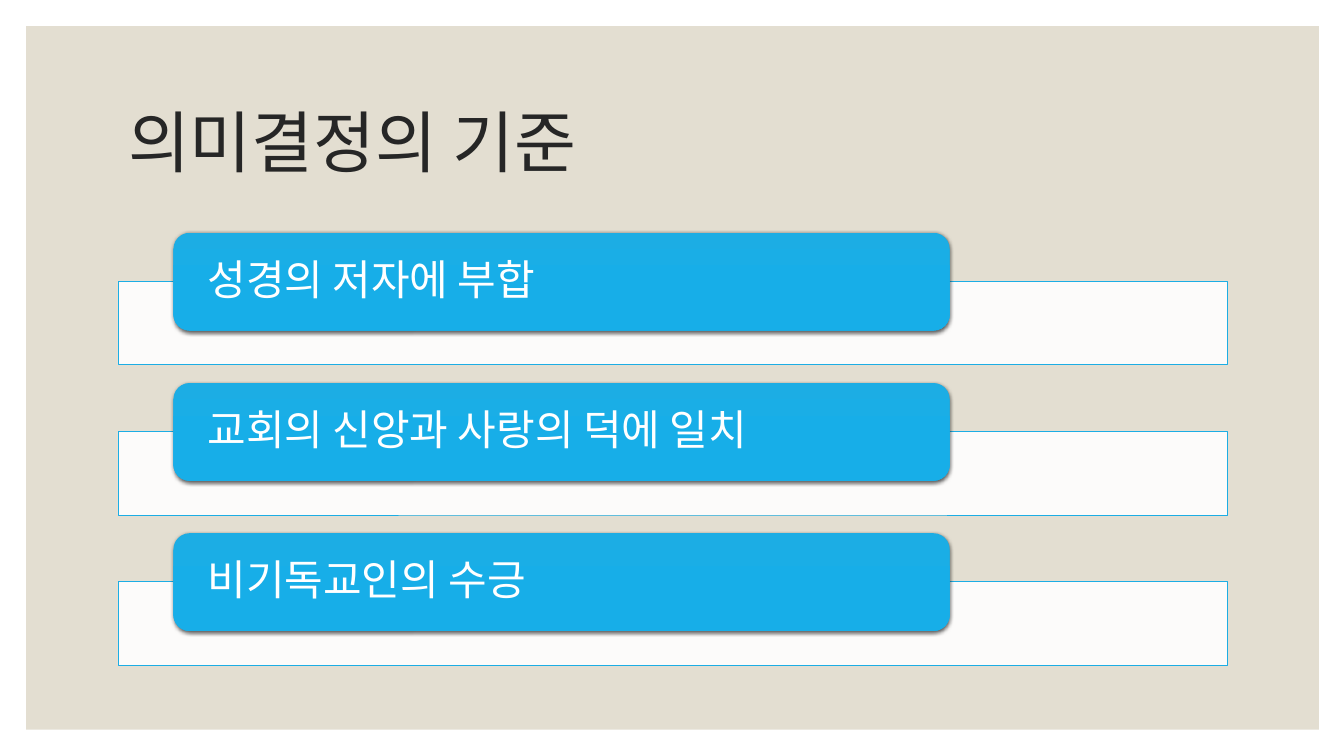
from lxml.etree import SubElement
from pptx import Presentation
from pptx.dml.color import RGBColor
from pptx.enum.shapes import MSO_SHAPE
from pptx.enum.text import MSO_ANCHOR, PP_ALIGN
from pptx.oxml.ns import qn
from pptx.util import Inches, Pt

TITLE = "의미결정의 기준"
RULES = ["성경의 저자에 부합", "교회의 신앙과 사랑의 덕에 일치", "비기독교인의 수긍"]

SAND = RGBColor(0xE3, 0xDE, 0xD1)
WHITE = RGBColor(0xFF, 0xFF, 0xFF)
INK = RGBColor(0x26, 0x26, 0x26)
BLUE = RGBColor(0x1C, 0xAD, 0xE4)
SKY = RGBColor(0x17, 0xAE, 0xE8)

LEFT, WIDTH = 1.17, 11
TOP, STEP = 2.31, 1.49
DROP = 0.48
FRAME = {"vertical_anchor": MSO_ANCHOR.MIDDLE, "word_wrap": True}
INSET = {"margin_left": Inches(0.29), "margin_right": Inches(0.29),
         "margin_top": 0, "margin_bottom": 0}
PARA = {"alignment": PP_ALIGN.LEFT, "line_spacing": 0.9}
SHADE = {"blurRad": "38100", "dist": "12700", "dir": "5400000",
         "algn": "ctr", "rotWithShape": "0"}


def apply(item, form):
    for name, value in form.items():
        setattr(item, name, value)


def write(shape, text, size, color, frame, para):
    body = shape.text_frame
    body.text = text
    apply(body, FRAME | frame)
    line = body.paragraphs[0]
    apply(line, PARA | para)
    font = line.runs[0].font
    apply(font, {"name": "Quicksand", "size": Pt(size)})
    font.color.rgb = color


def block(slide, kind, box, color):
    shape = slide.shapes.add_shape(kind, *map(Inches, box))
    shape.shadow.inherit = False
    shape.fill.solid()
    shape.fill.fore_color.rgb = color
    shape.line.fill.background()
    return shape


def add_bar(slide, top):
    bar = block(slide, MSO_SHAPE.RECTANGLE, (LEFT, top, WIDTH, 0.83), WHITE)
    bar.line.color.rgb = BLUE
    bar.line.width = Pt(0.5)
    tint = bar.element.spPr.find(qn("a:solidFill"))[0]
    SubElement(tint, qn("a:alpha"), val="90000")


def add_pill(slide, top, text):
    box = (LEFT + 0.55, top, 0.7 * WIDTH, 0.97)
    pill = block(slide, MSO_SHAPE.ROUNDED_RECTANGLE, box, BLUE)
    pill.fill.gradient()
    pill.fill.gradient_angle = 270
    for stop, spot, color in zip(pill.fill.gradient_stops, (0, 0.5), (BLUE, SKY)):
        stop.position = spot
        stop.color.rgb = color
    glow = pill.element.spPr.find(qn("a:effectLst"))
    shade = SubElement(glow, qn("a:outerShdw"), **SHADE)
    tint = SubElement(shade, qn("a:srgbClr"), val="000000")
    SubElement(tint, qn("a:alpha"), val="63000")
    write(pill, text, 30, WHITE, INSET, {"space_after": Pt(10.5)})


def main():
    deck = Presentation()
    apply(deck, {"slide_width": Inches(13.33), "slide_height": Inches(7.5)})
    slide = deck.slides.add_slide(deck.slide_layouts[5])
    title = slide.shapes.title
    apply(title, {"left": Inches(LEFT), "top": Inches(0.7),
                  "width": Inches(WIDTH), "height": Inches(1.5)})
    write(title, TITLE, 48, INK, {}, {})
    panel = block(slide, MSO_SHAPE.RECTANGLE, (0.26, 0.26, 12.82, 6.98), SAND)
    title.element.addprevious(panel.element)
    for row, text in enumerate(RULES):
        top = TOP + row * STEP
        add_bar(slide, top + DROP)
        add_pill(slide, top, text)
    deck.save("out.pptx")


if __name__ == "__main__":
    main()
